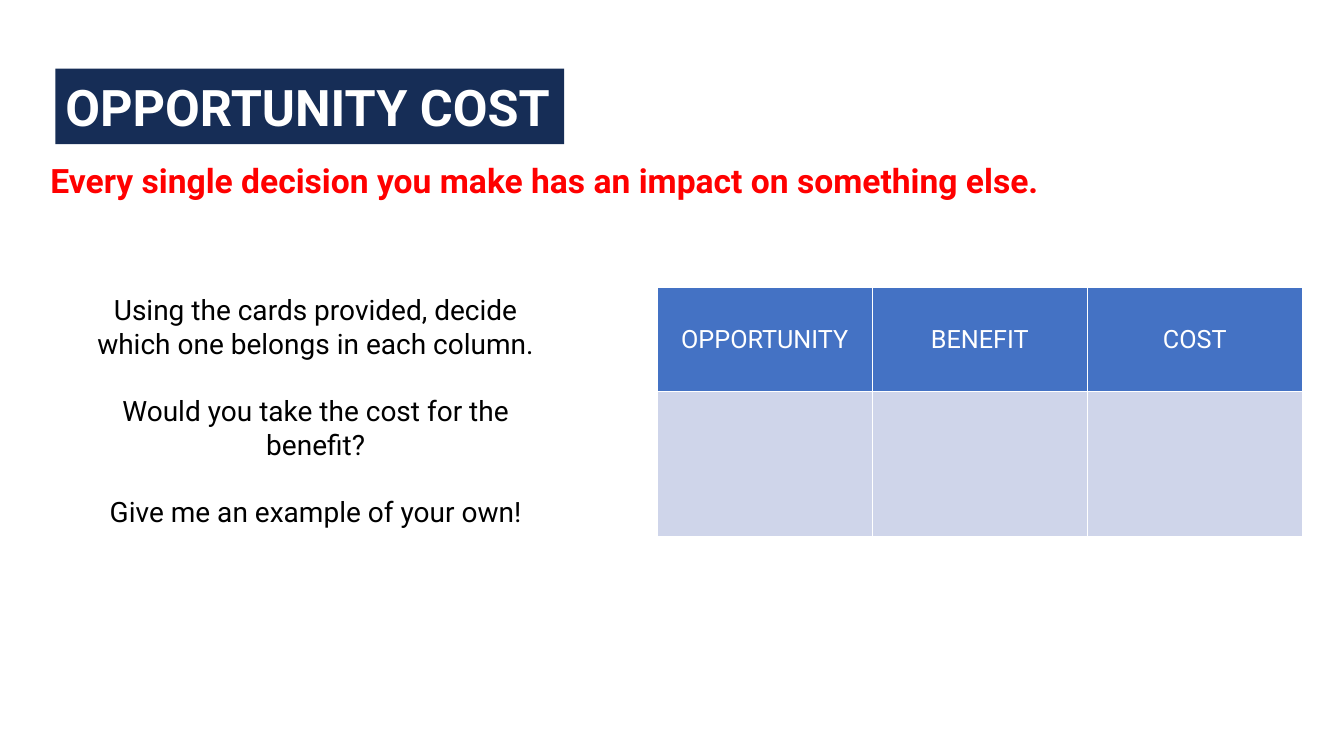
from lxml import etree
from pptx import Presentation
from pptx.dml.color import RGBColor
from pptx.enum import text
from pptx.oxml import ns
from pptx.util import Pt

NAVY = RGBColor(0x16, 0x2D, 0x56)
RED = RGBColor(0xFF, 0x00, 0x00)
BLUE = RGBColor(0x44, 0x72, 0xC4)
PALE = RGBColor(0xCF, 0xD5, 0xEA)
WHITE = RGBColor(0xFF, 0xFF, 0xFF)
BLACK = RGBColor(0x00, 0x00, 0x00)
FONT = "Roboto"
LEFT, MID = text.PP_ALIGN.LEFT, text.PP_ALIGN.CENTER


def place(shape, box):
    shape.left, shape.top, shape.width, shape.height = map(Pt, box)


def write(para, words, size, color, align, bold=False):
    para.alignment = align
    run = para.add_run()
    run.text = words
    font = run.font
    font.name, font.size, font.bold = FONT, Pt(size), bold
    font.color.rgb = color


def set_frame(frame, anchor):
    frame.word_wrap = True
    frame.auto_size = text.MSO_AUTO_SIZE.NONE
    frame.vertical_anchor = anchor


def add_title(slide, box, words):
    title = slide.shapes.title
    place(title, box)
    title.fill.solid()
    title.fill.fore_color.rgb = NAVY
    frame = title.text_frame
    set_frame(frame, text.MSO_ANCHOR.MIDDLE)
    write(frame.paragraphs[0], words, 36, WHITE, LEFT, True)


def add_claim(slide, box, words):
    frame = slide.shapes.add_textbox(*map(Pt, box)).text_frame
    set_frame(frame, text.MSO_ANCHOR.TOP)
    write(frame.paragraphs[0], words, 24, RED, LEFT, True)


def add_tasks(slide, box, tasks):
    body = slide.placeholders[1]
    place(body, box)
    frame = body.text_frame
    set_frame(frame, text.MSO_ANCHOR.TOP)
    for i, task in enumerate(tasks):
        para = frame.add_paragraph() if i else frame.paragraphs[0]
        props = para._p.get_or_add_pPr()
        props.set("marL", "0")
        props.set("indent", "0")
        etree.SubElement(props, ns.qn("a:buNone"))
        para.space_before = Pt(24 if i else 0)
        write(para, task, 20, BLACK, MID)


def add_edges(cell):
    props = cell._tc.get_or_add_tcPr()
    for i, side in enumerate(("lnL", "lnR", "lnT", "lnB")):
        line = etree.Element(ns.qn("a:" + side), w=str(Pt(1)))
        fill = etree.SubElement(line, ns.qn("a:solidFill"))
        etree.SubElement(fill, ns.qn("a:srgbClr"), val=str(WHITE))
        props.insert(i, line)


def add_grid(slide, box, heads, heights):
    table = slide.shapes.add_table(
        len(heights), len(heads), *map(Pt, box)).table
    for col in table.columns:
        col.width = Pt(box[2] / len(heads))
    for r, height in enumerate(heights):
        table.rows[r].height = Pt(height)
        for c, head in enumerate(heads):
            cell = table.cell(r, c)
            cell.fill.solid()
            cell.fill.fore_color.rgb = PALE if r else BLUE
            add_edges(cell)
            if r == 0:
                cell.vertical_anchor = text.MSO_ANCHOR.MIDDLE
                write(cell.text_frame.paragraphs[0], head, 18, WHITE, MID)


def main():
    deck = Presentation()
    deck.slide_width, deck.slide_height = Pt(960), Pt(540)
    slide = deck.slides.add_slide(deck.slide_layouts[1])
    add_grid(slide, (469.5, 205.5, 460.8, 178),
             ("OPPORTUNITY", "BENEFIT", "COST"), (74, 104))
    add_tasks(slide, (56, 205.5, 339, 177), (
        "Using the cards provided, decide which one belongs in each column.",
        "Would you take the cost for the benefit?",
        "Give me an example of your own!"))
    add_title(slide, (39.5, 49, 363.5, 54), "OPPORTUNITY COST")
    add_claim(slide, (29, 111, 728, 36),
              "Every single decision you make has an impact on something else.")
    deck.save("out.pptx")


if __name__ == "__main__":
    main()
